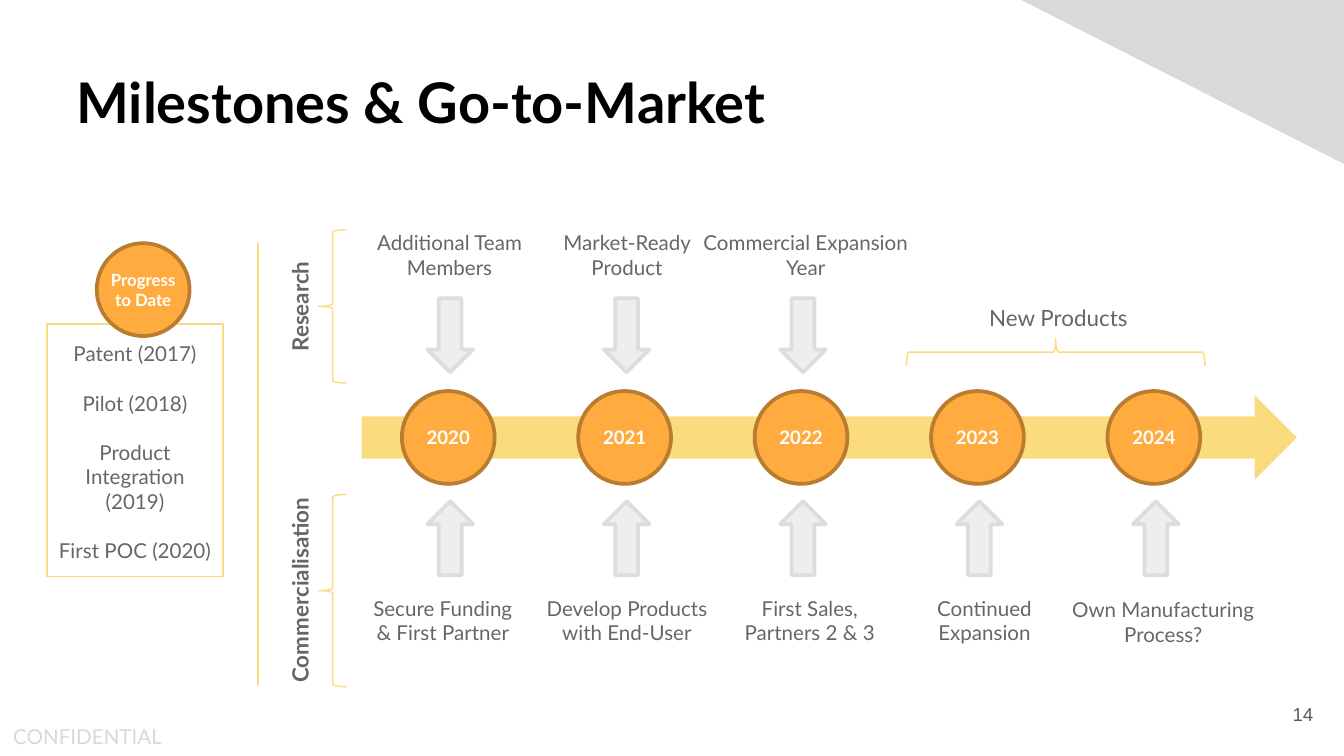
from dataclasses import dataclass

from lxml import etree
from pptx import Presentation
from pptx import util as u
from pptx.dml.color import RGBColor
from pptx.enum import shapes, text
from pptx.oxml.ns import qn

SHAPE = shapes.MSO_SHAPE
ANCHOR = text.MSO_ANCHOR
ALIGN = text.PP_ALIGN


@dataclass(frozen=True)
class Theme:
    font: str = "Lato"
    number_font: str = "Arial"
    black: str = "000000"
    white: str = "FFFFFF"
    body: str = "666666"
    number: str = "595959"
    pale: str = "D9D9D9"
    yellow: str = "FADC7E"
    orange: str = "FFAB40"
    brown: str = "BA7C2E"
    arrow: str = "EEEEEE"
    arrow_edge: str = "DDDDDD"
    title_size: int = 30
    label_size: int = 12
    body_size: int = 11
    year_size: int = 10
    badge_size: int = 9
    thin: float = 0.75
    thick: float = 2


THEME = Theme()
YEARS = ["2020", "2021", "2022", "2023", "2024"]
PITCH = 5.25 / (len(YEARS) - 1)  # distance between neighbouring years

# Text, left, width and side inset of each caption
RESEARCH = [
    ("Additional Team Members", 2.55, 1.59, 0.1),
    ("Market-Ready Product", 3.79, 1.75, 0.2),
    ("Commercial Expansion Year", 5.12, 1.75, 0.1),
]
# Text, left, top and side inset of each caption
COMMERCIAL = [
    ("Secure Funding\n& First Partner", 2.42, 4.21, 0.1),
    ("Develop Products with End-User", 3.79, 4.21, 0.2),
    ("First Sales,\nPartners 2 & 3", 5.15, 4.21, 0.1),
    ("Continued Expansion", 6.45, 4.21, 0.2),
    ("Own Manufacturing Process?", 7.78, 4.22, 0.1),
]
PROGRESS = ["Patent (2017)", "Pilot (2018)", "Product Integration",
            "(2019)", "First POC (2020)"]


def color(code):
    return RGBColor.from_string(code)


def write(shape, words, size, ink, bold=False, align=ALIGN.CENTER,
          anchor=ANCHOR.MIDDLE, inset=(0.1, 0.1), font=THEME.font):
    frame = shape.text_frame
    frame.text = words
    frame.word_wrap = True
    frame.vertical_anchor = anchor
    frame.margin_left = frame.margin_right = u.Inches(inset[0])
    frame.margin_top = frame.margin_bottom = u.Inches(inset[1])
    for para in frame.paragraphs:
        para.alignment = align
        for span in para.runs:
            span.font.name = font
            span.font.size = u.Pt(size)
            span.font.bold = bold
            span.font.color.rgb = color(ink)


def add_text(page, place, words, size, ink, rotation=0, **style):
    box = page.shapes.add_textbox(*map(u.Inches, place))
    box.rotation = rotation
    write(box, words, size, ink, **style)


def add_shape(page, kind, place, fill=None, edge=None, width=THEME.thin,
              rotation=0):
    shape = page.shapes.add_shape(kind, *map(u.Inches, place))
    shape.shadow.inherit = False
    shape.rotation = rotation
    if fill:
        shape.fill.solid()
        shape.fill.fore_color.rgb = color(fill)
    else:
        shape.fill.background()
    if edge:
        shape.line.color.rgb = color(edge)
        shape.line.width = u.Pt(width)
    else:
        shape.line.fill.background()
    return shape


def add_badge(page, left, top, words, size, side_inset):
    badge = add_shape(page, SHAPE.OVAL, (left, top, 0.69, 0.69),
                      THEME.orange, THEME.brown, THEME.thick)
    write(badge, words, size, THEME.white, bold=True, inset=(side_inset, 0.05))


def add_arrow(page, column, top, rotation=0):
    add_shape(page, SHAPE.DOWN_ARROW, (3.18 + column * PITCH, top, 0.34, 0.55),
              THEME.arrow, THEME.arrow_edge, THEME.thick, rotation)


def add_brace(page, place, rotation=0):
    add_shape(page, SHAPE.LEFT_BRACE, place, edge=THEME.yellow,
              rotation=rotation)


def add_divider(page, x, top, bottom):
    line = page.shapes.add_connector(
        shapes.MSO_CONNECTOR.STRAIGHT, *map(u.Inches, (x, bottom, x, top)))
    line.line.color.rgb = color(THEME.yellow)
    line.line.width = u.Pt(THEME.thin)
    etree.SubElement(line._element.spPr, qn("a:effectLst"))


def add_frame(page):
    # Title, corner, footer and page number
    add_text(page, (0.47, 0.4, 5.76, 0.81), "Milestones & Go-to-Market",
             THEME.title_size, THEME.black, bold=True, align=ALIGN.LEFT,
             anchor=ANCHOR.TOP)
    corner = add_shape(page, SHAPE.ISOSCELES_TRIANGLE, (7.6, 0, 2.4, 1.22),
                       THEME.pale, rotation=180)
    corner.adjustments[0] = 0
    add_text(page, (0, 5.34, 1.76, 0.29), "CONFIDENTIAL", THEME.body_size,
             THEME.pale, align=ALIGN.LEFT, anchor=ANCHOR.TOP,
             inset=(0.1, 0.05))
    add_text(page, (9.27, 5.1, 0.6, 0.43), "14", THEME.year_size, THEME.number,
             align=ALIGN.RIGHT, font=THEME.number_font)


def add_timeline(page):
    # Long arrow with one badge per year
    add_shape(page, SHAPE.RIGHT_ARROW, (2.69, 2.94, 6.96, 0.63), THEME.yellow)
    for column, year in enumerate(YEARS):
        add_badge(page, 2.99 + column * PITCH, 2.91, year, THEME.year_size,
                  0.04)

    # Research above, commercialisation below
    for name, label_top, top, height in [("Research", 2.13, 1.71, 1.14),
                                         ("Commercialisation", 4.24, 3.68, 1.43)]:
        add_brace(page, (2.37, top, 0.21, height))
        add_text(page, (1.29, label_top, 1.88, 0.3), name, THEME.label_size,
                 THEME.body, rotation=270, bold=True)
    for column, (words, left, width, side) in enumerate(RESEARCH):
        add_text(page, (left, 1.37, width, 0.81), words, THEME.body_size,
                 THEME.body, anchor=ANCHOR.BOTTOM, inset=(side, 0.1))
        add_arrow(page, column, 2.22)
    for column, (words, left, top, side) in enumerate(COMMERCIAL):
        add_text(page, (left, top, 1.75, 0.81), words, THEME.body_size,
                 THEME.body, inset=(side, 0.1))
        add_arrow(page, column, 3.73, rotation=180)

    # New products span the last two years
    add_text(page, (7, 1.75, 1.75, 0.81), "New Products", THEME.label_size,
             THEME.body, anchor=ANCHOR.BOTTOM)
    add_brace(page, (7.75, 1.51, 0.21, 2.22), rotation=90)


def add_progress(page):
    # Panel of past steps under its badge
    panel = add_shape(page, SHAPE.RECTANGLE, (0.35, 2.41, 1.31, 1.88),
                      THEME.white, THEME.yellow)
    write(panel, "\n".join(PROGRESS), THEME.body_size, THEME.body,
          anchor=ANCHOR.BOTTOM, inset=(0.04, 0.1))
    for para in panel.text_frame.paragraphs[1:]:
        if not para.text.startswith("("):
            para.space_before = u.Pt(13.2)
    add_badge(page, 0.72, 1.81, "Progress to Date", THEME.badge_size, 0)
    add_divider(page, 1.92, 1.81, 5.1)


def main():
    deck = Presentation()
    deck.slide_width = u.Inches(10)
    deck.slide_height = deck.slide_width * 9 // 16
    page = deck.slides.add_slide(deck.slide_layouts[6])
    add_frame(page)
    add_timeline(page)
    add_progress(page)
    deck.save("out.pptx")


if __name__ == "__main__":
    main()
